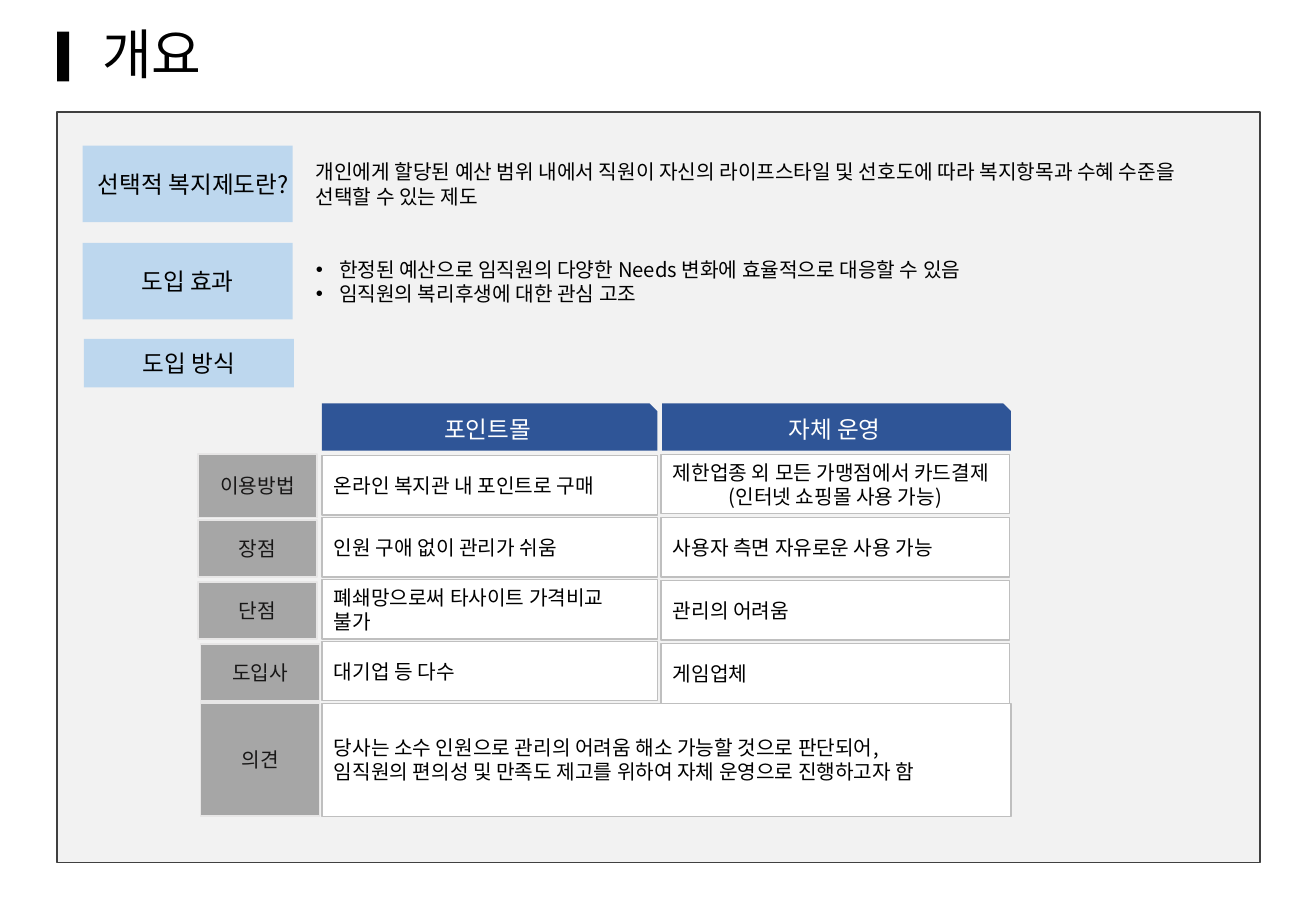
from dataclasses import dataclass

from lxml import etree
from pptx import Presentation
from pptx.dml.color import RGBColor
from pptx.enum.shapes import MSO_SHAPE
from pptx.enum.text import MSO_ANCHOR, MSO_AUTO_SIZE, PP_ALIGN
from pptx.oxml.ns import qn
from pptx.util import Inches, Pt

RECTANGLE, SNIPPED = MSO_SHAPE.RECTANGLE, MSO_SHAPE.SNIP_1_RECTANGLE
LEFT, CENTER = PP_ALIGN.LEFT, PP_ALIGN.CENTER
TOP, MIDDLE = MSO_ANCHOR.TOP, MSO_ANCHOR.MIDDLE
NO_AUTOFIT = MSO_AUTO_SIZE.NONE
FONT = "Noto Sans CJK KR"
COLORS = {
    "black": "000000", "white": "FFFFFF", "panel": "F2F2F2", "panel_line": "404040",
    "topic": "BDD7EE", "header": "2F5597", "label": "A6A6A6", "label_line": "E7E6E6",
    "label_text": "181717", "cell_line": "BFBFBF",
}


@dataclass(frozen=True)
class Style:
    fill: str
    line: str | None = None
    line_width: float = 1
    size: float = 12
    color: str = "black"
    align: PP_ALIGN = CENTER
    preset: MSO_SHAPE = RECTANGLE


@dataclass(frozen=True)
class Box:
    left: float
    top: float
    width: float
    height: float
    style: Style
    text: str = ""


PANEL = Style("panel", "panel_line")
MARKER = Style("black")
TOPIC = Style("topic", size=14)
HEADER = Style("header", size=14, color="white", preset=SNIPPED)
LABEL = Style("label", "label_line", color="label_text")
CELL = Style("white", "cell_line", 0.75, align=LEFT)

# Comparison columns: left edge, first top, row pitch and width
ROW_HEIGHT = 0.49
MALL_LEFT, MALL_TOP, MALL_PITCH, MALL_WIDTH = 2.65, 3.75, 0.51, 2.76
OWN_LEFT, OWN_TOP, OWN_PITCH, OWN_WIDTH = 5.44, 3.74, 0.52, 2.87

MALL_TEXTS = ["온라인 복지관 내 포인트로 구매", "인원 구애 없이 관리가 쉬움",
              "폐쇄망으로써 타사이트 가격비교 불가", "대기업 등 다수"]
OWN_TEXTS = ["제한업종 외 모든 가맹점에서 카드결제\n(인터넷 쇼핑몰 사용 가능)",
             "사용자 측면 자유로운 사용 가능", "관리의 어려움", "게임업체"]

TOPICS = [
    Box(0.68, 1.2, 1.73, 0.63, TOPIC, "선택적 복지제도란?"),
    Box(0.68, 2, 1.73, 0.63, TOPIC, "도입 효과"),
    Box(0.69, 2.79, 1.73, 0.4, TOPIC, "도입 방식"),
]
HEADERS = [
    Box(MALL_LEFT, 3.32, MALL_WIDTH, 0.39, HEADER, "포인트몰"),
    Box(5.45, 3.32, OWN_WIDTH, 0.39, HEADER, "자체 운영"),
]
LABELS = [
    Box(1.63, 3.74, 0.98, 0.52, LABEL, "이용방법"),
    Box(1.63, 4.28, 0.98, 0.47, LABEL, "장점"),
    Box(1.63, 4.79, 0.98, 0.47, LABEL, "단점"),
    Box(1.65, 5.3, 0.98, 0.47, LABEL, "도입사"),
    Box(1.65, 5.79, 0.98, 0.93, LABEL, "의견"),
]
MALL_CELLS = [Box(MALL_LEFT, MALL_TOP + row * MALL_PITCH, MALL_WIDTH, ROW_HEIGHT, CELL, text)
              for row, text in enumerate(MALL_TEXTS)]
OWN_CELLS = [Box(OWN_LEFT, OWN_TOP + row * OWN_PITCH, OWN_WIDTH, ROW_HEIGHT, CELL, text)
             for row, text in enumerate(OWN_TEXTS)]
OPINION = Box(MALL_LEFT, 5.79, 5.67, 0.93, CELL,
              "당사는 소수 인원으로 관리의 어려움 해소 가능할 것으로 판단되어,\n"
              "임직원의 편의성 및 만족도 제고를 위하여 자체 운영으로 진행하고자 함")


def rgb(name: str) -> RGBColor:
    return RGBColor.from_string(COLORS[name])


def write(shape, text: str, size: float, color: str = "black",
          align: PP_ALIGN = LEFT, anchor: MSO_ANCHOR = MIDDLE, bullet: bool = False) -> None:
    """Fill a shape's text frame and format every run."""
    frame = shape.text_frame
    frame.text = text
    frame.word_wrap = True
    frame.auto_size = NO_AUTOFIT
    frame.vertical_anchor = anchor
    for paragraph in frame.paragraphs:
        if bullet:
            properties = paragraph._p.get_or_add_pPr()
            properties.set("marL", str(Inches(0.19)))
            properties.set("indent", str(-Inches(0.19)))
            etree.SubElement(properties, qn("a:buChar")).set("char", "•")
        paragraph.alignment = align
        paragraph.space_before = Pt(0)
        for run in paragraph.runs:
            run.font.size = Pt(size)
            run.font.name = FONT
            run.font.color.rgb = rgb(color)
            east_asian = etree.SubElement(run._r.get_or_add_rPr(), qn("a:ea"))
            east_asian.set("typeface", FONT)


def place(shape, left: float, top: float, width: float, height: float) -> None:
    shape.left, shape.top = Inches(left), Inches(top)
    shape.width, shape.height = Inches(width), Inches(height)


def draw_box(slide, box: Box):
    style = box.style
    shape = slide.shapes.add_shape(style.preset, Inches(box.left), Inches(box.top),
                                   Inches(box.width), Inches(box.height))
    shape.shadow.inherit = False
    shape.fill.solid()
    shape.fill.fore_color.rgb = rgb(style.fill)
    if style.line:
        shape.line.color.rgb = rgb(style.line)
        shape.line.width = Pt(style.line_width)
    else:
        shape.line.fill.background()
    if box.text:
        write(shape, box.text, style.size, style.color, style.align)
    return shape


def main() -> None:
    presentation = Presentation()
    presentation.slide_width, presentation.slide_height = Inches(10.83), Inches(7.5)
    slide = presentation.slides.add_slide(presentation.slide_layouts[1])

    # Background panel, placed behind the placeholders
    panel = draw_box(slide, Box(0.47, 0.92, 9.9, 6.18, PANEL))
    slide.shapes.title._element.addprevious(panel._element)

    # Title and its marker
    title = slide.shapes.title
    place(title, 0.74, 0.18, 1.74, 0.56)
    write(title, "개요", 32, anchor=TOP)
    title.text_frame.paragraphs[0].line_spacing = 0.9
    draw_box(slide, Box(0.47, 0.26, 0.1, 0.41, MARKER))

    # Definition and effects beside the topics
    definition = slide.shapes.add_textbox(Inches(2.5), Inches(1.2), Inches(7.48), Inches(0.63))
    write(definition, "개인에게 할당된 예산 범위 내에서 직원이 자신의 라이프스타일 및 선호도에 따라 "
                      "복지항목과 수혜 수준을 선택할 수 있는 제도", 12)
    effects = slide.placeholders[1]
    place(effects, 2.5, 2, 7.48, 0.63)
    write(effects, "한정된 예산으로 임직원의 다양한 Needs 변화에 효율적으로 대응할 수 있음\n"
                   "임직원의 복리후생에 대한 관심 고조", 12, bullet=True)

    # Topics and comparison grid
    for box in TOPICS + HEADERS + LABELS + MALL_CELLS:
        draw_box(slide, box)
    own_shapes = [draw_box(slide, box) for box in OWN_CELLS]
    own_shapes[0].text_frame.paragraphs[1].alignment = CENTER
    draw_box(slide, OPINION)

    presentation.save("out.pptx")


if __name__ == "__main__":
    main()
